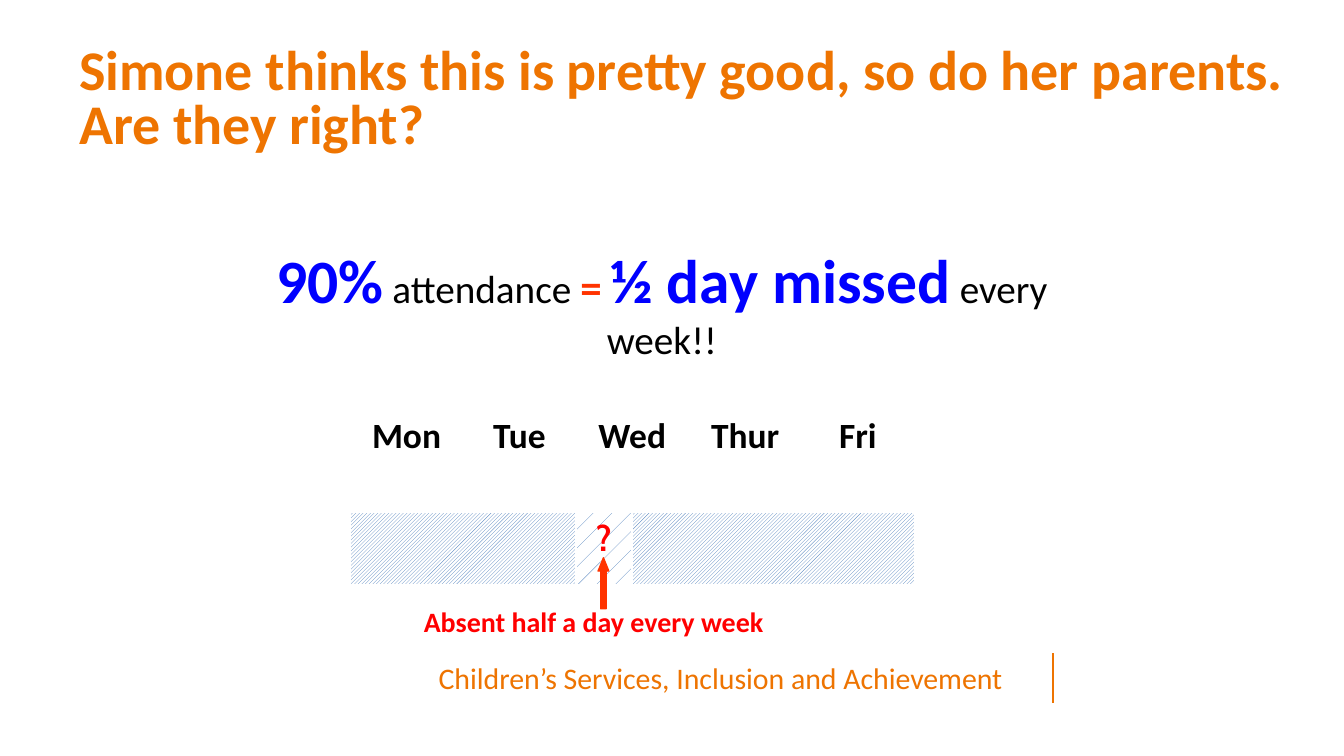
from lxml import etree
from pptx import Presentation
from pptx.dml.color import RGBColor as Rgb
from pptx.enum.dml import MSO_PATTERN as Pat
from pptx.enum.shapes import MSO_CONNECTOR as Conn, MSO_SHAPE as Geo
from pptx.enum.text import MSO_ANCHOR as Anchor, MSO_AUTO_SIZE as Auto, PP_ALIGN as Align
from pptx.oxml.ns import qn
from pptx.util import Pt

PX = 4572  # 200 px to the inch
HEX = {
    "orange": "EE7401", "blue": "0000FF", "black": "000000", "red": "FF0000",
    "arrow": "FF3300", "hatch": "4F81BD", "white": "FFFFFF",
}


def emu(*nums):
    return [n * PX for n in nums]


def rgb(name):
    return Rgb.from_string(HEX[name])


def style(run, size, color, bold=False, face="Calibri"):
    font = run.font
    font.name, font.size, font.bold = face, Pt(size), bold
    font.color.rgb = rgb(color)


def add_text(slide, box, parts, align=Align.LEFT, anchor=Anchor.TOP, pad=0, wrap=True):
    """Add one paragraph; each part is (text, size, color, bold)."""
    frame = slide.shapes.add_textbox(*emu(*box)).text_frame
    frame.word_wrap, frame.vertical_anchor = wrap, anchor
    frame.margin_left = frame.margin_right = pad * PX
    frame.margin_top = frame.margin_bottom = pad * PX // 2
    para = frame.paragraphs[0]
    para.alignment = align
    for text, *look in parts:
        run = para.add_run()
        run.text = text
        style(run, *look)
    return frame


def add_title(slide, box):
    text = "Simone thinks this is pretty good, so do her parents. Are they right?"
    frame = add_text(slide, box, [(text, 30, "orange", True)], anchor=Anchor.BOTTOM)
    frame.paragraphs[0].line_spacing = 0.8


def add_claim(slide, box):
    add_text(slide, box, [
        ("90%", 33, "blue", True),
        (" attendance ", 21, "black"),
        ("=", 23, "arrow", True),
        (" ", 21, "black"),
        ("½ day missed", 33, "blue", True),
        (" every week!!", 21, "black"),
    ], align=Align.CENTER)


def add_edges(cell):
    props = cell._tc.get_or_add_tcPr()
    for spot, side in enumerate(("lnL", "lnR", "lnT", "lnB")):
        line = etree.Element(qn("a:" + side), w=str(Pt(1)))
        fill = etree.SubElement(line, qn("a:solidFill"))
        etree.SubElement(fill, qn("a:srgbClr"), val=HEX["white"])
        props.insert(spot, line)


def set_cell(cell, text, color="black", face="Calibri"):
    cell.margin_left = cell.margin_right = 14 * PX
    cell.margin_top = cell.margin_bottom = 8 * PX
    para = cell.text_frame.paragraphs[0]
    para.text, para.alignment = text, Align.CENTER
    style(para.runs[0], 19, color, True, face)


def add_week(slide, box):
    x, y, w, h = box
    half = w // 10
    widths = [2 * half, 2 * half, half, half, 2 * half, 2 * half]
    table = slide.shapes.add_table(2, len(widths), *emu(*box)).table
    table.first_row = table.horz_banding = False
    for col, wide in zip(table.columns, widths):
        col.width = wide * PX
    table.rows[0].height, table.rows[1].height = emu(152, h - 152)

    for cell in table.iter_cells():
        cell.fill.background()
        add_edges(cell)
    for row, first, last in ((0, 2, 3), (1, 0, 1), (1, 3, 5)):
        table.cell(row, first).merge(table.cell(row, last))
    for col, day in zip((0, 1, 2, 4, 5), ("Mon", "Tue", "Wed", "Thur", "Fri")):
        set_cell(table.cell(0, col), day)
    set_cell(table.cell(1, 2), "?", "red", "Cabin")
    for col in range(len(widths)):
        fill = table.cell(1, col).fill
        fill.patterned()
        fill.pattern = Pat.PERCENT_5 if col == 2 else Pat.LIGHT_UPWARD_DIAGONAL
        fill.fore_color.rgb, fill.back_color.rgb = rgb("hatch"), rgb("white")


def add_note(slide, box):
    """Add the absence caption and the arrow that rises from it."""
    x, y, w, h = box
    frame = add_text(slide, box, [("Absent half a day every week", 15, "red", True)],
                     pad=20, wrap=False)
    frame.auto_size = Auto.SHAPE_TO_FIT_TEXT
    arrow = slide.shapes.add_shape(Geo.UP_ARROW, *emu(x + 279, y - 60, 16, 76))
    arrow.shadow.inherit = False
    arrow.adjustments[0], arrow.adjustments[1] = 0.5, 1.24
    arrow.fill.solid()
    arrow.fill.fore_color.rgb = arrow.line.color.rgb = rgb("arrow")
    arrow.line.width = Pt(0.75)


def add_footer(slide, box):
    x, y, w, h = box
    rule = slide.shapes.add_connector(Conn.STRAIGHT, *emu(x + w, y, x + w, y + h))
    rule.line.color.rgb, rule.line.width = rgb("orange"), Pt(1)
    etree.SubElement(rule._element.spPr, qn("a:effectLst"))
    text = "Children’s Services, Inclusion and Achievement"
    add_text(slide, (x, y, w - 75, h), [(text, 16, "orange")], Align.RIGHT, Anchor.MIDDLE)


def main():
    deck = Presentation()
    deck.slide_width, deck.slide_height = emu(2000, 1125)
    slide = deck.slides.add_slide(deck.slide_layouts[6])
    add_footer(slide, (74, 972, 1493, 74))
    add_title(slide, (118, 7, 1800, 224))
    add_claim(slide, (329, 360, 1312, 608))
    add_week(slide, (521, 610, 840, 260))
    add_note(slide, (611, 890, 568, 70))
    deck.save("out.pptx")


if __name__ == "__main__":
    main()
